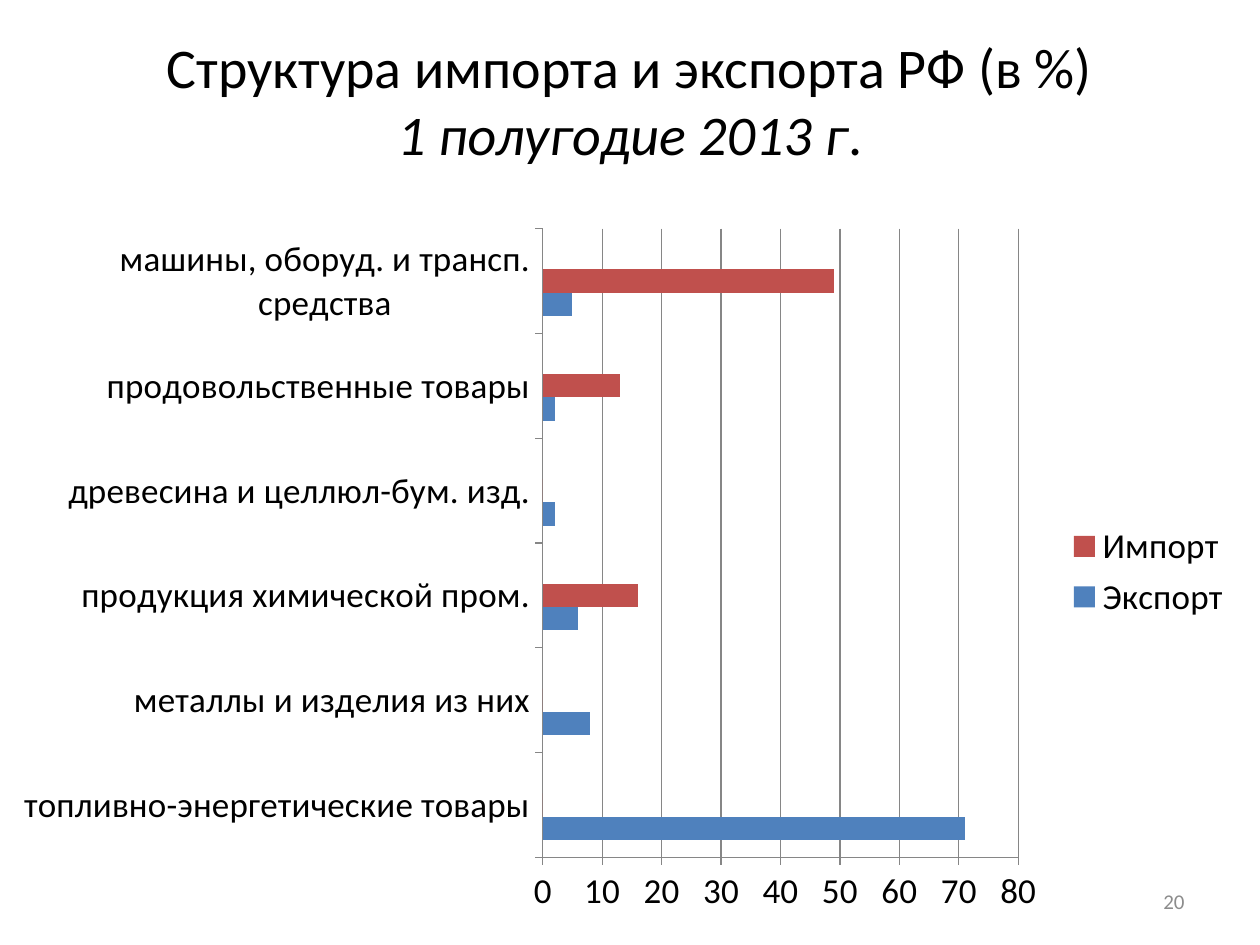
from lxml import etree
from pptx import Presentation
from pptx.chart.data import CategoryChartData
from pptx.dml.color import RGBColor
from pptx.enum.chart import XL_CHART_TYPE, XL_LEGEND_POSITION, XL_TICK_MARK
from pptx.enum.text import MSO_ANCHOR, PP_ALIGN
from pptx.oxml.ns import qn
from pptx.util import Inches, Pt

BAR = XL_CHART_TYPE.BAR_CLUSTERED
LEGEND_RIGHT = XL_LEGEND_POSITION.RIGHT
TICK_OUT = XL_TICK_MARK.OUTSIDE
MIDDLE = MSO_ANCHOR.MIDDLE
CENTER, RIGHT = PP_ALIGN.CENTER, PP_ALIGN.RIGHT

FONT = "Calibri"
BLACK, GRAY, AXIS_GRAY = "000000", "8C8C8C", "868686"
WIDTH, HEIGHT = Inches(10), Inches(7.5)

# Boxes as shares of the slide: left, top, width, height
TITLE_BOX = (0, 0, 1, 0.21)
CHART_BOX = (0, 0.227, 0.988, 0.756)
NUMBER_BOX = (0.717, 0.927, 0.233, 0.053)
# Plot area as shares of the chart
PLOT_BOX = {"x": 0.436, "y": 0.02, "w": 0.382, "h": 0.88}

CATEGORIES = [
    "топливно-энергетические товары",
    "металлы и изделия из них",
    "продукция химической пром.",
    "древесина и целлюл-бум. изд.",
    "продовольственные товары",
    "машины, оборуд. и трансп. средства",
]
# The empty third series keeps a free slot above each pair of bars
SERIES = [
    ("Экспорт", [71, 8, 6, 2, 2, 5], "4F81BD"),
    ("Импорт", [0, 0, 16, 0, 13, 49], "C0504D"),
    ("Столбец1", [None] * len(CATEGORIES), "9BBB59"),
]


def rgb(color):
    return RGBColor.from_string(color)


def place(box):
    left, top, width, height = box
    return (round(left * WIDTH), round(top * HEIGHT),
            round(width * WIDTH), round(height * HEIGHT))


def style_font(font, size, color):
    font.name, font.size = FONT, Pt(size)
    font.color.rgb = rgb(color)


def add_text(slide, box, text, size, color, align):
    frame = slide.shapes.add_textbox(*place(box)).text_frame
    frame.word_wrap = True
    frame.vertical_anchor = MIDDLE
    paragraph = frame.paragraphs[0]
    paragraph.text = text
    paragraph.alignment = align
    for run in paragraph.runs:
        style_font(run.font, size, color)
    return paragraph


def add_title(slide, box):
    title = add_text(
        slide, box,
        "Структура импорта и экспорта РФ (в %)\v1 полугодие 2013 г",
        32, BLACK, CENTER)
    title.runs[-1].font.italic = True
    period = title.add_run()
    period.text = "."
    style_font(period.font, 32, BLACK)


def fix_plot_area(chart):
    plot_area = chart._chartSpace.chart.plotArea
    for old_layout in plot_area.findall(qn("c:layout")):
        plot_area.remove(old_layout)
    layout = etree.Element(qn("c:layout"))
    manual = etree.SubElement(layout, qn("c:manualLayout"))
    settings = [("layoutTarget", "inner"), ("xMode", "edge"), ("yMode", "edge")]
    for tag, value in settings + list(PLOT_BOX.items()):
        etree.SubElement(manual, qn(f"c:{tag}")).set("val", str(value))
    plot_area.insert(0, layout)


def hide_empty_series(legend):
    # Legend entries of a bar chart count from the last series
    entry = etree.Element(qn("c:legendEntry"))
    etree.SubElement(entry, qn("c:idx")).set("val", "0")
    etree.SubElement(entry, qn("c:delete")).set("val", "1")
    legend._element.insert(1, entry)


def add_trade_chart(slide, box):
    data = CategoryChartData()
    data.categories = CATEGORIES
    for name, values, _ in SERIES:
        data.add_series(name, values)
    chart = slide.shapes.add_chart(BAR, *place(box), data).chart
    chart.has_title = False
    style_font(chart.font, 20, BLACK)

    # Bars
    plot = chart.plots[0]
    plot.gap_width = 150
    plot.vary_by_categories = False
    for series, (_, _, color) in zip(plot.series, SERIES):
        series.format.fill.solid()
        series.format.fill.fore_color.rgb = rgb(color)

    # Axes and grid
    shares = chart.value_axis
    shares.minimum_scale, shares.maximum_scale, shares.major_unit = 0, 80, 10
    shares.has_major_gridlines = True
    for axis in (chart.category_axis, shares):
        axis.major_tick_mark = TICK_OUT
        axis.format.line.color.rgb = rgb(AXIS_GRAY)
    shares.major_gridlines.format.line.color.rgb = rgb(AXIS_GRAY)
    fix_plot_area(chart)

    # Legend
    chart.has_legend = True
    chart.legend.position = LEGEND_RIGHT
    chart.legend.include_in_layout = False
    hide_empty_series(chart.legend)


def main():
    prs = Presentation()
    prs.slide_width, prs.slide_height = WIDTH, HEIGHT
    slide = prs.slides.add_slide(prs.slide_layouts[6])
    add_title(slide, TITLE_BOX)
    add_trade_chart(slide, CHART_BOX)
    add_text(slide, NUMBER_BOX, "20", 12, GRAY, RIGHT)
    prs.save("out.pptx")


if __name__ == "__main__":
    main()
